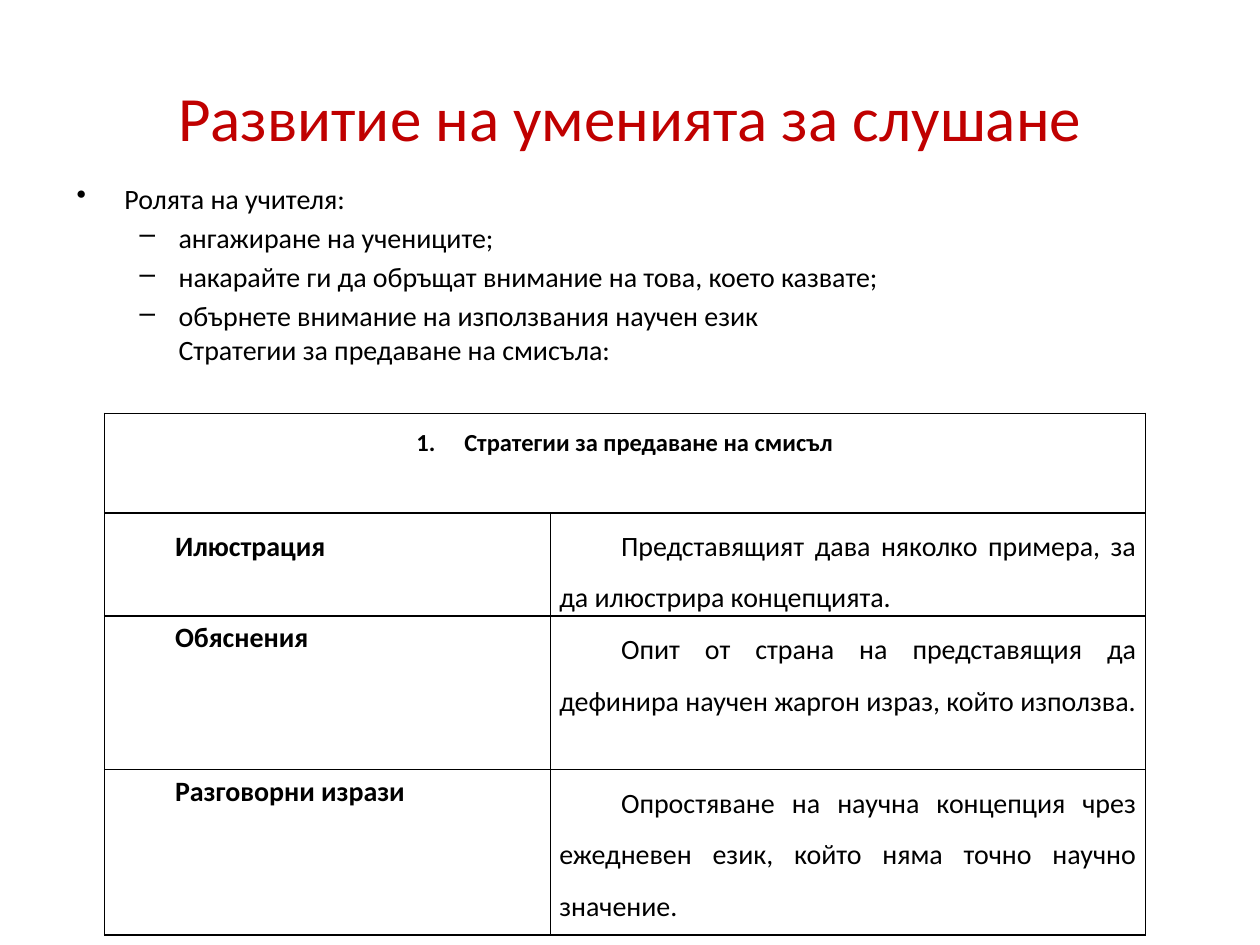
from lxml import etree
from pptx import Presentation
from pptx.dml.color import RGBColor
from pptx.enum.text import MSO_ANCHOR, PP_ALIGN
from pptx.oxml.ns import qn
from pptx.util import Inches, Pt

RED = RGBColor(0xC0, 0x00, 0x00)
BLACK = RGBColor(0x00, 0x00, 0x00)
FONT = "Calibri"
CENTER, JUSTIFY = PP_ALIGN.CENTER, PP_ALIGN.JUSTIFY
TOP, MIDDLE = MSO_ANCHOR.TOP, MSO_ANCHOR.MIDDLE


def add_run(para, text, size, color=BLACK, bold=False):
    span = para.add_run()
    span.text = text
    span.font.name = FONT
    span.font.size = Pt(size)
    span.font.bold = bold
    span.font.color.rgb = color


def set_indent(para, left, first, bullet=None, **attributes):
    """Set left margin and first-line indent, with an optional bullet element."""
    properties = para._p.get_or_add_pPr()
    properties.set("marL", str(Inches(left)))
    properties.set("indent", str(Inches(first)))
    if bullet:
        etree.SubElement(properties, qn(bullet), **attributes)


deck = Presentation()
deck.slide_width, deck.slide_height = Inches(10), Inches(7.5)
page = deck.slides.add_slide(deck.slide_layouts[5])

# Title
title = page.shapes.title
title.left, title.top = Inches(0.5), Inches(0.3)
title.width, title.height = Inches(9), Inches(1.25)
title.text_frame.vertical_anchor = MIDDLE
para = title.text_frame.paragraphs[0]
para.alignment = CENTER
add_run(para, "Развитие на уменията за слушане", 36, RED)

# Teacher's role
role_box = page.shapes.add_textbox(Inches(0.51), Inches(1.39), Inches(9), Inches(4.95))
role_frame = role_box.text_frame
role_frame.word_wrap = True
para = role_frame.paragraphs[0]
set_indent(para, 0.38, -0.38, "a:buChar", char="•")
add_run(para, "Ролята на учителя:", 16)
for task in (
    "ангажиране на учениците;",
    "накарайте ги да обръщат внимание на това, което казвате;",
    "обърнете внимание на използвания научен език",
):
    para = role_frame.add_paragraph()
    para.level = 1
    set_indent(para, 0.81, -0.31, "a:buChar", char="–")
    para.space_before = Pt(3.2)
    add_run(para, task, 16)
para.add_line_break()
add_run(para, "Стратегии за предаване на смисъла:", 16)

# Strategy table
strategies = [
    ("Илюстрация", 1.5,
     "Представящият дава няколко примера, за да илюстрира концепцията."),
    ("Обяснения", 1.15,
     "Опит от страна на представящия да дефинира научен жаргон израз, който използва."),
    ("Разговорни изрази", 1.15,
     "Опростяване на научна концепция чрез ежедневен език, който няма точно научно значение."),
]
column_widths = [3.54, 4.72]
row_heights = [0.79, 0.82, 1.22, 1.31]
table = page.shapes.add_table(
    len(row_heights), len(column_widths), Inches(0.83), Inches(3.28),
    Inches(sum(column_widths)), Inches(sum(row_heights)),
).table
table.first_row = False
table.horz_banding = False
for column, width in zip(table.columns, column_widths):
    column.width = Inches(width)
for row, height in zip(table.rows, row_heights):
    row.height = Inches(height)

for row in table.rows:
    for column_index, cell in enumerate(row.cells):
        cell.margin_left = cell.margin_right = Inches(0.07)
        cell.margin_top = cell.margin_bottom = 0
        cell.vertical_anchor = TOP
        inner_side = "a:lnL" if column_index else "a:lnR"
        for side in ("a:lnL", "a:lnR", "a:lnT", "a:lnB"):
            width = Pt(0.5) if side == inner_side else Pt(1)
            line = etree.SubElement(cell._tc.get_or_add_tcPr(), qn(side), w=str(width))
            line_fill = etree.SubElement(line, qn("a:solidFill"))
            etree.SubElement(line_fill, qn("a:srgbClr"), val=str(BLACK))
        cell.fill.background()

header = table.cell(0, 0)
header.merge(table.cell(0, 1))
para = header.text_frame.paragraphs[0]
para.alignment = CENTER
para.line_spacing = 1.5
set_indent(para, 0.38, -0.38, "a:buAutoNum", type="arabicPeriod")
add_run(para, "Стратегии за предаване на смисъл", 14, bold=True)

for row_index, (name, name_spacing, meaning) in enumerate(strategies, start=1):
    for column_index, (text, spacing) in enumerate([(name, name_spacing), (meaning, 1.5)]):
        para = table.cell(row_index, column_index).text_frame.paragraphs[0]
        para.alignment = JUSTIFY
        para.line_spacing = spacing
        set_indent(para, 0, 0.49)
        add_run(para, text, 16, bold=column_index == 0)

deck.save("out.pptx")
